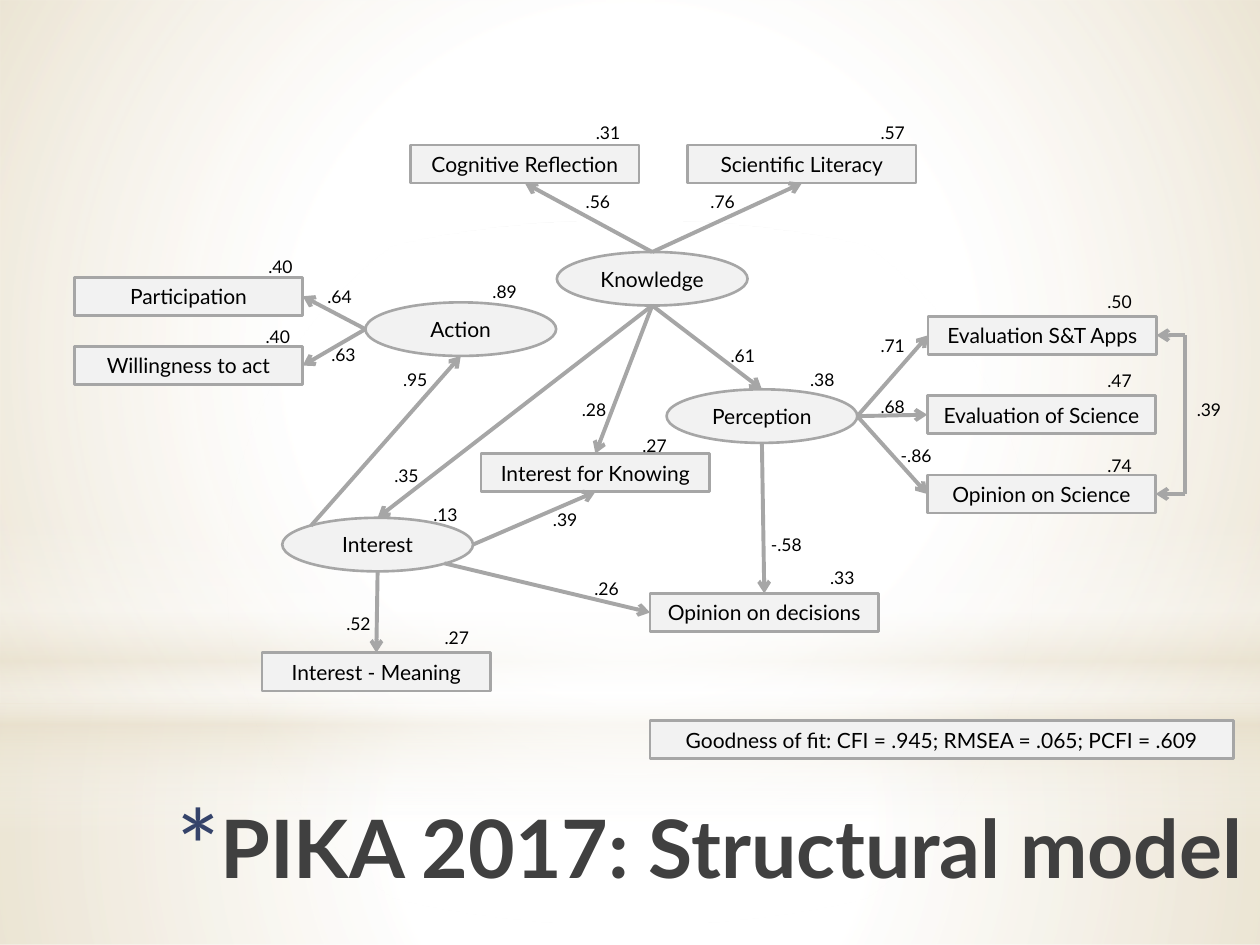
import pptx
import pptx.dml.color
import pptx.enum.shapes
import pptx.enum.text
import pptx.oxml
import pptx.oxml.ns
import pptx.util

Pt = pptx.util.Pt
SHAPE = pptx.enum.shapes.MSO_SHAPE
ALIGN = pptx.enum.text.PP_ALIGN
ANCHOR = pptx.enum.text.MSO_ANCHOR
NAMESPACE = pptx.oxml.ns.nsdecls("a")

NODE_FORMAT = {"size": Pt(12), "name": "Lato"}
VALUE_FORMAT = {"size": Pt(10), "name": "Lato"}
TITLE_FORMAT = {"size": Pt(46), "name": "Lato", "bold": True}

SIDES = {
    "top": (0.5, 0), "bottom": (0.5, 1), "left": (0, 0.5), "right": (1, 0.5),
    "upper left": (0.15, 0.15), "lower right": (0.85, 0.85),
}

OBSERVED_SIZE = (130.5, 21.8)
OBSERVED = {
    "Scientific Literacy": (351, 16.8),
    "Opinion on decisions": (329.5, 273.1),
    "Interest for Knowing": (233, 193.2),
    "Evaluation S&T Apps": (488.4, 114.7),
    "Evaluation of Science": (487.9, 160.1),
    "Opinion on Science": (487.9, 205.4),
    "Cognitive Reflection": (192.7, 16.8),
    "Participation": (0.5, 92.4),
    "Willingness to act": (0.5, 132),
    "Interest - Meaning": (107.8, 307),
}

LATENT_SIZE = (109, 30.6)
LATENT = {
    "Action": (166.8, 106.8),
    "Knowledge": (276.2, 78),
    "Interest": (119.3, 229.9),
    "Perception": (338.9, 156.5),
}

PATHS = [
    ("Knowledge", "bottom", "Interest", "top"),
    ("Knowledge", "bottom", "Interest for Knowing", "top"),
    ("Knowledge", "bottom", "Perception", "top"),
    ("Interest", "upper left", "Action", "bottom"),
    ("Interest", "bottom", "Interest - Meaning", "top"),
    ("Interest", "lower right", "Opinion on decisions", "left"),
    ("Interest", "right", "Interest for Knowing", "bottom"),
    ("Perception", "bottom", "Opinion on decisions", "top"),
    ("Knowledge", "top", "Cognitive Reflection", "bottom"),
    ("Knowledge", "top", "Scientific Literacy", "bottom"),
    ("Action", "left", "Participation", "right"),
    ("Action", "left", "Willingness to act", "right"),
    ("Perception", "right", "Evaluation S&T Apps", "left"),
    ("Perception", "right", "Evaluation of Science", "left"),
    ("Perception", "right", "Opinion on Science", "left"),
]

VALUES = [
    (".50", 583.7, 96.7), (".39", 634.8, 158.6), (".31", 291.4, 0.2),
    (".57", 454.1, 0.2), (".47", 583.7, 142.1), (".74", 583.7, 190.3),
    (".40", 104.2, 76.6), (".40", 102.7, 116.9), (".89", 232.3, 91),
    (".38", 413.8, 141.4), (".13", 198.5, 218.4), (".27", 205, 289),
    (".33", 425.3, 254.4), (".27", 318, 178.8), (".52", 148.8, 281),
    (".26", 290.6, 260.9), (".39", 266.9, 221.3), (".35", 176.2, 196.1),
    (".95", 181.2, 141.4), (".63", 140.2, 127), (".64", 138, 93.8),
    (".28", 283.4, 158.6), (".61", 368.4, 127.7), ("-.58", 391.4, 235.7),
    (".71", 454.1, 121.9), (".68", 454.1, 156.5), ("-.86", 465.6, 184.6),
    (".76", 356.9, 39.8), (".56", 285.6, 39.8),
]


def color(hex_string):
    return pptx.dml.color.RGBColor.from_string(hex_string)


def in_points(box):
    return [Pt(length) for length in box]


def write(para, text, format_values, hex_string="000000"):
    span = para.add_run()
    span.text = text
    for name, value in format_values.items():
        setattr(span.font, name, value)
    span.font.color.rgb = color(hex_string)


def add_glow(page, kind, box, stops, direction):
    shape = page.shapes.add_shape(kind, *in_points(box))
    shape.shadow.inherit = False
    shape.line.fill.background()
    stop_xml = "".join(
        f'<a:gs pos="{place * 1000}"><a:srgbClr val="{tint}">'
        f'<a:alpha val="{opacity * 1000}"/></a:srgbClr></a:gs>'
        for place, tint, opacity in stops)
    gradient = pptx.oxml.parse_xml(
        f'<a:gradFill {NAMESPACE} rotWithShape="1"><a:gsLst>{stop_xml}</a:gsLst>'
        f'{direction}</a:gradFill>')
    shape._element.spPr.find(pptx.oxml.ns.qn("a:prstGeom")).addnext(gradient)


def draw_backdrop(page, box):
    left, top, width, height = box
    white, sand = "FFFFFF", "E7DEC9"
    circle = ('<a:path path="circle"><a:fillToRect l="50000" t="50000" '
              'r="50000" b="50000"/></a:path>')
    downward = '<a:lin ang="5400000" scaled="0"/>'
    horizon = 402
    add_glow(page, SHAPE.RECTANGLE, (left, top + horizon, width, height - horizon),
             [(0, white, 91), (37, white, 76), (100, sand, 79)], circle)
    add_glow(page, SHAPE.RECTANGLE, (left, top, width, horizon),
             [(0, white, 89), (48, white, 62), (100, sand, 79)], circle)
    add_glow(page, SHAPE.RECTANGLE, (left, top + 296.6, width, 180),
             [(0, white, 0), (29, white, 30), (45, sand, 40), (55, white, 26),
              (65, sand, 60), (100, white, 0)], downward)
    add_glow(page, SHAPE.OVAL, (left, top + 126, width, horizon),
             [(0, white, 100), (56, white, 0)], circle)


def draw_title(page, box):
    title = page.shapes.title
    title.left, title.top, title.width, title.height = in_points(box)
    page.shapes._spTree.append(title._element)
    frame = title.text_frame
    frame.auto_size = pptx.enum.text.MSO_AUTO_SIZE.NONE
    frame.vertical_anchor = ANCHOR.TOP
    para = frame.paragraphs[0]
    para.alignment = ALIGN.RIGHT
    write(para, "PIKA 2017: Structural model", TITLE_FORMAT, "404040")
    properties = para._p.get_or_add_pPr()
    properties.set("marL", str(Pt(25.2)))
    properties.set("indent", str(-Pt(25.2)))
    for bullet in ('<a:buClr {}><a:srgbClr val="35436A"/></a:buClr>',
                   '<a:buSzPct {} val="128000"/>',
                   '<a:buFont {} typeface="Lato"/>',
                   '<a:buChar {} char="*"/>'):
        properties.append(pptx.oxml.parse_xml(bullet.format(NAMESPACE)))


def draw_node(page, kind, box, text):
    node = page.shapes.add_shape(kind, *in_points(box))
    node.shadow.inherit = False
    node.fill.solid()
    node.fill.fore_color.rgb = color("F2F2F2")
    node.line.color.rgb = color("A6A6A6")
    node.line.width = Pt(1.5)
    node.text_frame.word_wrap = True
    node.text_frame.vertical_anchor = ANCHOR.MIDDLE
    para = node.text_frame.paragraphs[0]
    para.alignment = ALIGN.CENTER
    write(para, text, NODE_FORMAT)


def draw_path(page, start, end, arrow=True):
    connector = page.shapes.add_connector(
        pptx.enum.shapes.MSO_CONNECTOR.STRAIGHT, *in_points(start + end))
    connector.line.color.rgb = color("A6A6A6")
    connector.line.width = Pt(2.25)
    if arrow:
        connector.line._get_or_add_ln().append(
            pptx.oxml.parse_xml(f'<a:tailEnd {NAMESPACE} type="arrow"/>'))
    connector._element.spPr.append(pptx.oxml.parse_xml(f"<a:effectLst {NAMESPACE}/>"))


def draw_value(page, box, text):
    label = page.shapes.add_textbox(*in_points(box))
    label.text_frame.word_wrap = False
    write(label.text_frame.paragraphs[0], text, VALUE_FORMAT)


def draw_model(page, box):
    left, top, width, height = box
    boxes = {}
    for kind, size, places in ((SHAPE.RECTANGLE, OBSERVED_SIZE, OBSERVED),
                               (SHAPE.OVAL, LATENT_SIZE, LATENT)):
        for text, (x, y) in places.items():
            boxes[text] = (left + x, top + y) + size
            draw_node(page, kind, boxes[text], text)

    def joint(name, side):
        x, y, node_width, node_height = boxes[name]
        across, down = SIDES[side]
        return (x + across * node_width, y + down * node_height)

    for source, source_side, target, target_side in PATHS:
        draw_path(page, joint(source, source_side), joint(target, target_side))

    ends = [joint(name, "right") for name in ("Evaluation S&T Apps", "Opinion on Science")]
    corners = [(left + width, y) for x, y in ends]
    draw_path(page, *corners, arrow=False)
    for corner, end in zip(corners, ends):
        draw_path(page, corner, end)

    for text, x, y in VALUES:
        draw_value(page, (left + x, top + y, 29 if len(text) == 3 else 32.4, 19.4), text)


def main():
    deck = pptx.Presentation()
    deck.slide_width, deck.slide_height = Pt(720), Pt(540)
    page = deck.slides.add_slide(deck.slide_layouts[5])
    draw_backdrop(page, (0, 0, 720, 540))
    draw_title(page, (43.2, 452.2, 673.9, 78.5))
    draw_model(page, (42, 66, 635.2, 329))
    draw_node(page, SHAPE.RECTANGLE, (371.5, 411.8, 333.4, 21.8),
              "Goodness of fit: CFI = .945; RMSEA = .065; PCFI = .609")
    deck.save("out.pptx")


if __name__ == "__main__":
    main()
